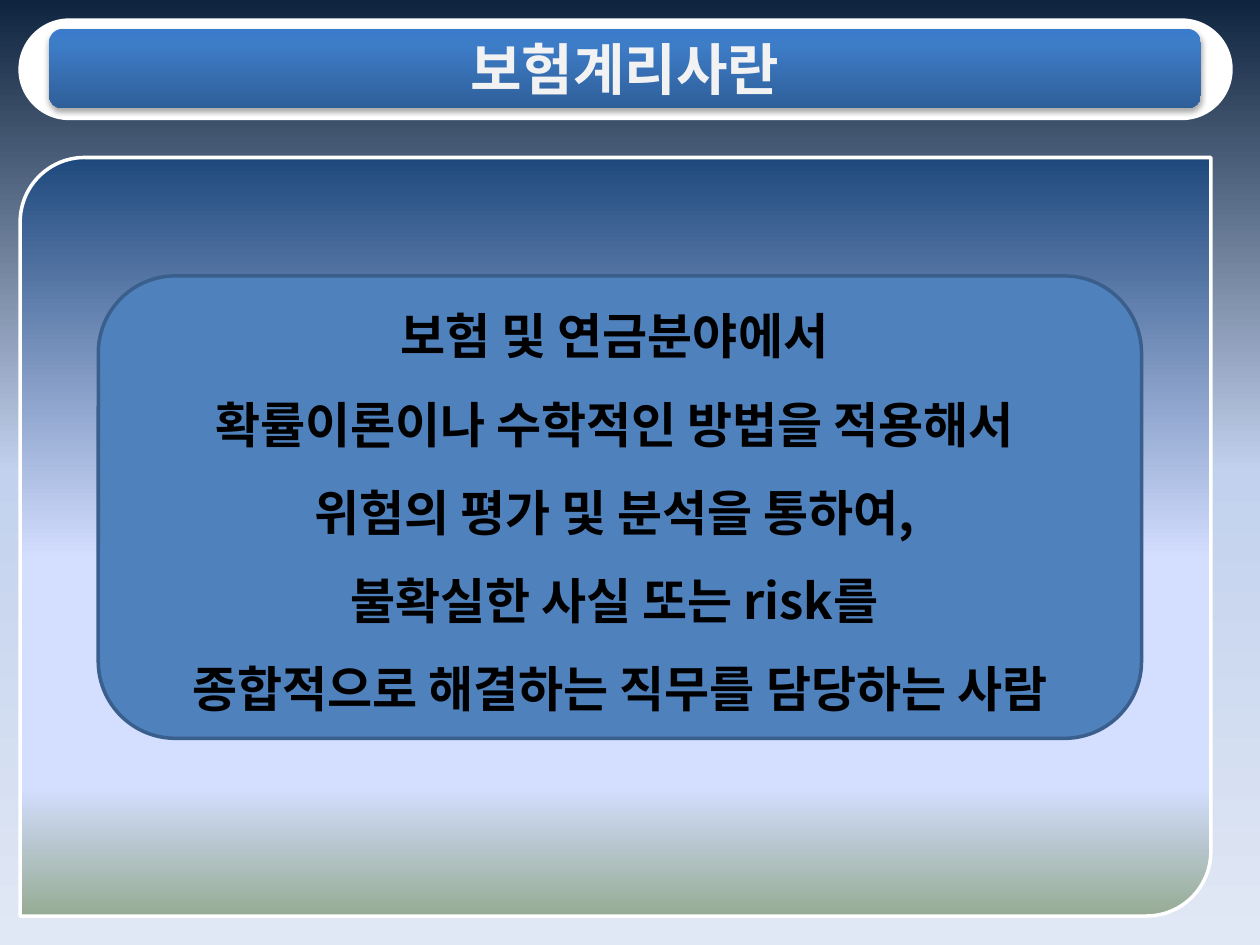
from lxml.etree import SubElement
from pptx import Presentation
from pptx.dml.color import RGBColor
from pptx.enum.shapes import MSO_SHAPE as Shape
from pptx.enum.text import MSO_ANCHOR as Anchor, PP_ALIGN as Align
from pptx.oxml.ns import qn
from pptx.util import Inches, Pt

# Content
TITLE = "보험계리사란"
DEFINITION = [
    "보험 및 연금분야에서 ",
    "확률이론이나 수학적인 방법을 적용해서 ",
    "위험의 평가 및 분석을 통하여, ",
    "불확실한 사실 또는 risk를 ",
    "종합적으로 해결하는 직무를 담당하는 사람",
]

# Style
FONT = "Noto Sans CJK KR"
WHITE = RGBColor(0xFF, 0xFF, 0xFF)
BLACK = RGBColor(0x00, 0x00, 0x00)
PALE = RGBColor(0xF2, 0xF2, 0xF2)
BLUE = RGBColor(0x4F, 0x81, 0xBD)
EDGE = RGBColor(0x3A, 0x5F, 0x8C)
NAVY = RGBColor(0x0F, 0x24, 0x3E)
SKY = RGBColor(0xC2, 0xD1, 0xED)
MIST = RGBColor(0xE1, 0xE8, 0xF5)
DEEP = RGBColor(0x1F, 0x49, 0x7D)
LILAC = RGBColor(0xD4, 0xDE, 0xFF)
SAGE = RGBColor(0x96, 0xAB, 0x94)
BAR_TOP = RGBColor(0x3A, 0x7C, 0xCB)
BAR_MID = RGBColor(0x3D, 0x7C, 0xC7)
BAR_LOW = RGBColor(0x2F, 0x5F, 0x99)

# Gradient stops in percent, from top to bottom
PAGE_STOPS = [(0, NAVY), (50, SKY), (100, MIST)]
PANEL_STOPS = [(0, DEEP), (53, LILAC), (83, LILAC), (100, SAGE)]
BAR_STOPS = [(0, BAR_TOP), (20, BAR_MID), (100, BAR_LOW)]


def add_color(parent, color):
    return SubElement(parent, qn("a:srgbClr"), val=str(color))


def fill_down(fill, owner, stops):
    fill.gradient()
    fill.gradient_angle = 270
    stop_list = next(owner.iter(qn("a:gsLst")))
    for old in list(stop_list):
        stop_list.remove(old)
    for percent, color in stops:
        add_color(SubElement(stop_list, qn("a:gs"), pos=str(percent * 1000)), color)


def add_box(page, kind, place, fill, line=None, adjustments=()):
    box = page.shapes.add_shape(kind, *map(Inches, place))
    box.shadow.inherit = False
    for index, value in enumerate(adjustments):
        box.adjustments[index] = value
    if isinstance(fill, list):
        fill_down(box.fill, box._element.spPr, fill)
    else:
        box.fill.solid()
        box.fill.fore_color.rgb = fill
    if line is None:
        box.line.fill.background()
    else:
        box.line.color.rgb = line
        box.line.width = Pt(2)
    return box


def add_shadow(box):
    effects = box._element.spPr.find(qn("a:effectLst"))
    shadow = SubElement(effects, qn("a:outerShdw"), blurRad=str(Pt(3.1)),
                        dist=str(Pt(1.8)), dir="5400000", rotWithShape="0")
    SubElement(add_color(shadow, BLACK), qn("a:alpha"), val="35000")


def write(box, lines, size, color, spacing=1.0):
    frame = box.text_frame
    frame.word_wrap = True
    frame.vertical_anchor = Anchor.MIDDLE
    for index, line in enumerate(lines):
        para = frame.add_paragraph() if index else frame.paragraphs[0]
        para.alignment = Align.CENTER
        para.line_spacing = spacing
        span = para.add_run()
        span.text = line
        span.font.name = FONT
        span.font.size = Pt(size)
        span.font.bold = True
        span.font.color.rgb = color
        SubElement(span.font._element, qn("a:ea"), typeface=FONT)


deck = Presentation()
deck.slide_width, deck.slide_height = Inches(10), Inches(7.5)
page = deck.slides.add_slide(deck.slide_layouts[6])
fill_down(page.background.fill, page._element, PAGE_STOPS)

# Title frame and content panel
add_box(page, Shape.ROUNDED_RECTANGLE, (0.16, 0.16, 9.61, 0.78), WHITE, WHITE, [0.5])
add_box(page, Shape.ROUND_2_DIAG_RECTANGLE, (0.16, 1.25, 9.45, 6.02),
        PANEL_STOPS, WHITE, [0.085, 0])

# Title bar
title_bar = add_box(page, Shape.ROUNDED_RECTANGLE, (0.39, 0.23, 9.14, 0.63), BAR_STOPS)
add_shadow(title_bar)
write(title_bar, [TITLE], 32, PALE)

# Definition card; the deeper bottom margin lifts the text slightly
card = add_box(page, Shape.ROUNDED_RECTANGLE, (0.78, 2.19, 8.28, 3.67), BLUE, EDGE)
write(card, DEFINITION, 28, BLACK, spacing=1.5)
card.text_frame.margin_bottom = Inches(0.21)

deck.save("out.pptx")
